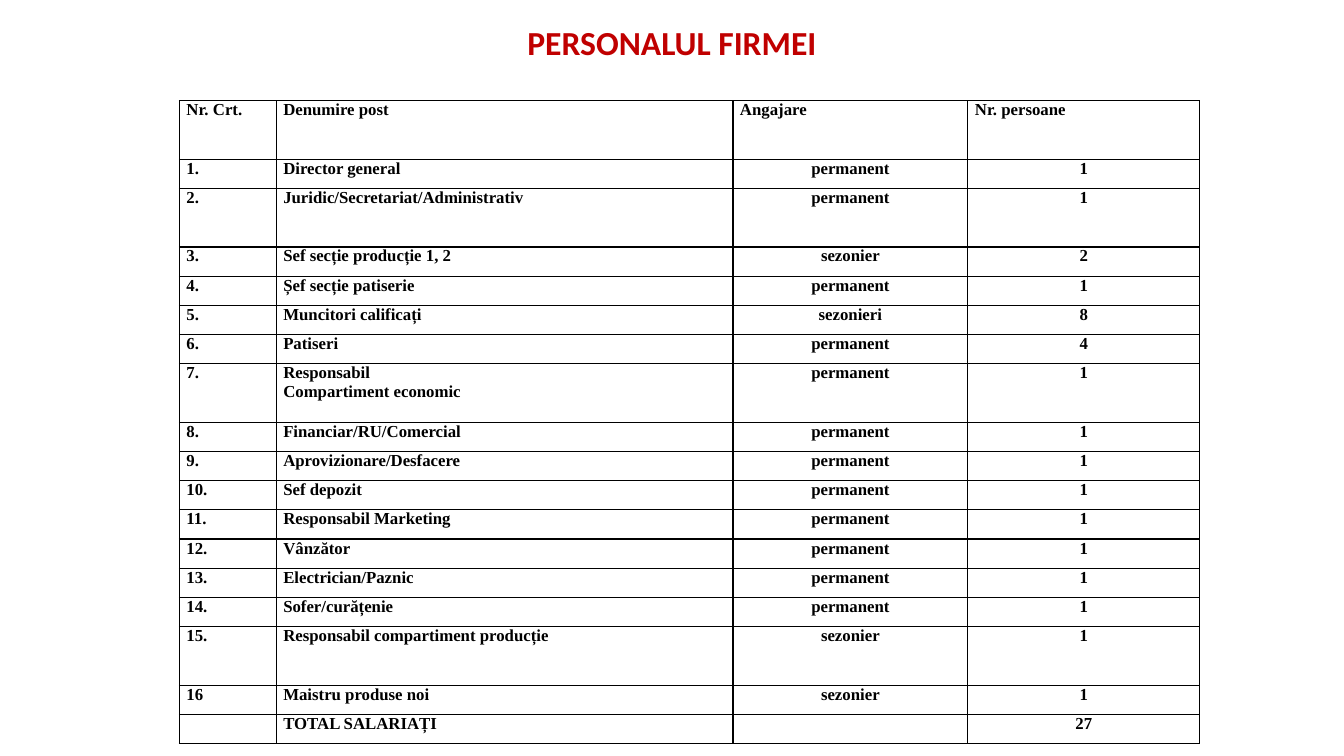
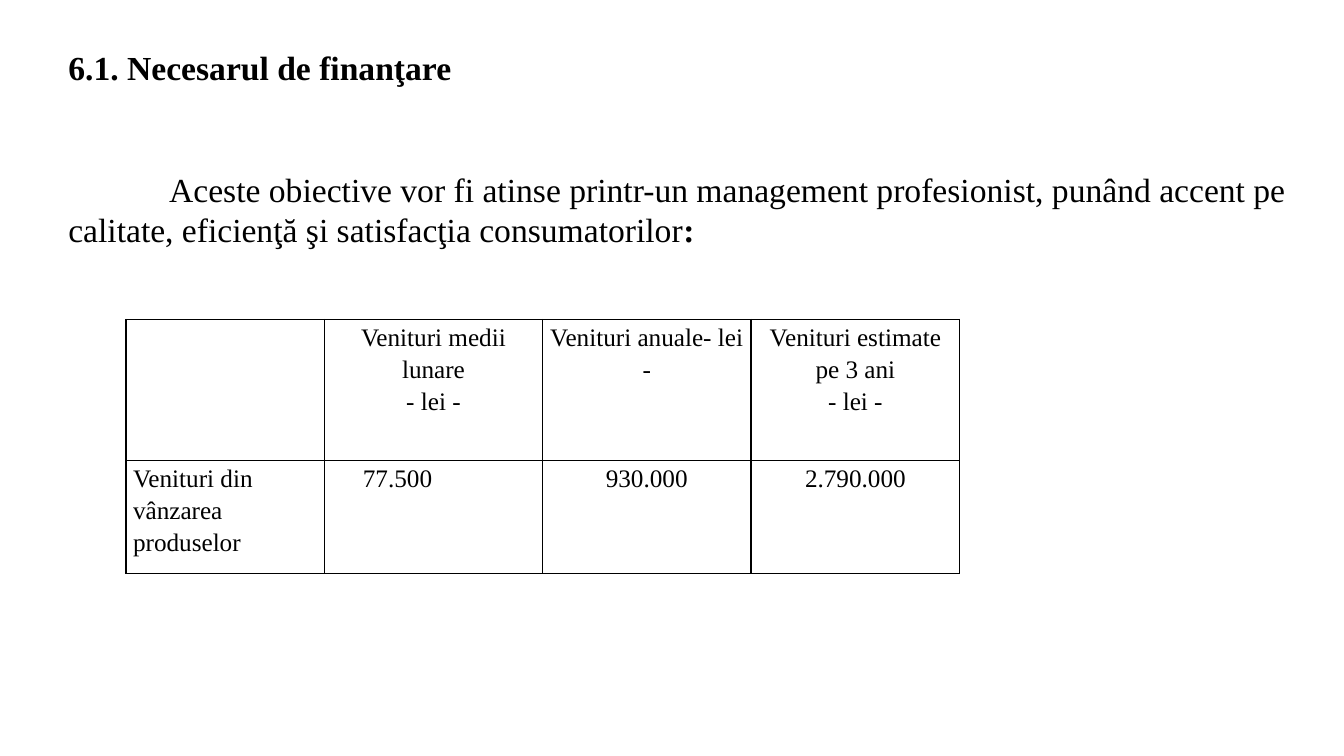
from lxml import etree
from pptx import Presentation
from pptx.dml.color import RGBColor
from pptx.enum.text import MSO_AUTO_SIZE, PP_ALIGN
from pptx.oxml.ns import qn
from pptx.util import Inches, Pt

LEFT, CENTER = PP_ALIGN.LEFT, PP_ALIGN.CENTER
FIT_SHAPE = MSO_AUTO_SIZE.SHAPE_TO_FIT_TEXT

BLACK, RED = "000000", "C00000"
SERIF, SANS = "Times New Roman", "Calibri"
TITLE_SIZE = 24

STAFF_HEADER = ("Nr. Crt.", "Denumire post", "Angajare", "Nr. persoane")
STAFF = [
    ("1.", "Director general", "permanent", "1"),
    ("2.", "Juridic/Secretariat/Administrativ", "permanent", "1"),
    ("3.", "Sef secție producție 1, 2", "sezonier", "2"),
    ("4.", "Șef secție patiserie", "permanent", "1"),
    ("5.", "Muncitori calificați", "sezonieri", "8"),
    ("6.", "Patiseri", "permanent", "4"),
    ("7.", "Responsabil\nCompartiment economic", "permanent", "1"),
    ("8.", "Financiar/RU/Comercial", "permanent", "1"),
    ("9.", "Aprovizionare/Desfacere", "permanent", "1"),
    ("10.", "Sef depozit", "permanent", "1"),
    ("11.", "Responsabil Marketing", "permanent", "1"),
    ("12.", "Vânzător", "permanent", "1"),
    ("13.", "Electrician/Paznic", "permanent", "1"),
    ("14.", "Sofer/curățenie", "permanent", "1"),
    ("15.", "Responsabil compartiment producție", "sezonier", "1"),
    ("16", "Maistru produse noi", "sezonier", "1"),
    ("", "TOTAL SALARIAȚI", "", "27"),
]
STAFF_ROW = 0.29
TALL_STAFF_ROWS = (0, 2, 7, 15)

INCOME = [
    ("", "Venituri medii lunare\n- lei -", "Venituri anuale- lei -",
     "Venituri estimate pe 3 ani\n- lei -"),
    ("Venituri din vânzarea produselor", "77.500", "930.000", "2.790.000"),
]


def rgb(color):
    return RGBColor.from_string(color)


def add_run(paragraph, text, size=TITLE_SIZE, font=SERIF, color=BLACK, bold=False):
    run = paragraph.add_run()
    run.text = text
    run.font.size = Pt(size)
    run.font.name = font
    run.font.color.rgb = rgb(color)
    run.font.bold = bold


def add_text(frame, text, align=LEFT, line_spacing=None, space_before=None,
             left_margin=0, first_indent=0, **run_format):
    """Write each line of text as a paragraph and return the last one."""
    for line in text.split("\n"):
        paragraph = frame.paragraphs[0]
        if paragraph.runs:
            paragraph = frame.add_paragraph()
        paragraph.alignment = align
        if line_spacing:
            paragraph.line_spacing = line_spacing
        if space_before:
            paragraph.space_before = Pt(space_before)
        properties = paragraph._p.get_or_add_pPr()
        properties.set("marL", str(Inches(left_margin)))
        properties.set("indent", str(Inches(first_indent)))
        if line:
            add_run(paragraph, line, **run_format)
        else:
            # An empty cell keeps the row's text size
            size = run_format.get("size", TITLE_SIZE)
            etree.SubElement(paragraph._p, qn("a:endParaRPr"), sz=str(size * 100))
    return paragraph


def add_text_box(slide, left, top, width, height):
    shape = slide.shapes.add_textbox(
        Inches(left), Inches(top), Inches(width), Inches(height))
    shape.text_frame.word_wrap = True
    shape.text_frame.auto_size = FIT_SHAPE
    return shape.text_frame


def style_cell(cell):
    cell.margin_left = cell.margin_right = Inches(0.07)
    cell.margin_top = cell.margin_bottom = 0
    properties = cell._tc.get_or_add_tcPr()
    for side in ("a:lnL", "a:lnR", "a:lnT", "a:lnB"):
        line = etree.SubElement(properties, qn(side), w=str(Pt(1)))
        fill = etree.SubElement(line, qn("a:solidFill"))
        etree.SubElement(fill, qn("a:srgbClr"), val=BLACK)
    cell.fill.background()


def add_grid(slide, left, top, widths, heights, rows, cell_format):
    """Add a bordered table; cell_format(row, column) gives the text format."""
    table = slide.shapes.add_table(
        len(rows), len(widths), Inches(left), Inches(top),
        Inches(sum(widths)), Inches(sum(heights))).table
    table.first_row = table.horz_banding = False
    for column, width in zip(table.columns, widths):
        column.width = Inches(width)
    for row, height in zip(table.rows, heights):
        row.height = Inches(height)
    for row_index, texts in enumerate(rows):
        for column_index, text in enumerate(texts):
            cell = table.cell(row_index, column_index)
            style_cell(cell)
            add_text(cell.text_frame, text, **cell_format(row_index, column_index))


def staff_format(row, column):
    align = CENTER if row > 0 and column > 1 else LEFT
    return {"size": 12, "bold": True, "align": align}


def income_format(row, column):
    cell_format = {"size": 18, "line_spacing": 1.15, "align": CENTER}
    if column == 0:
        cell_format["align"] = LEFT
    elif (row, column) == (1, 1):
        cell_format.update(align=LEFT, left_margin=0.31)
    return cell_format


def build_staff_slide(slide):
    rows = [STAFF_HEADER, *STAFF]
    heights = [STAFF_ROW * (2 if index in TALL_STAFF_ROWS else 1)
               for index in range(len(rows))]
    add_grid(slide, 1.78, 1, (0.96, 4.53, 2.33, 2.3), heights, rows, staff_format)
    title = add_text_box(slide, 0, 0.17, 13.33, 0.5)
    add_text(title, "PERSONALUL FIRMEI", align=CENTER, font=SANS, color=RED,
             size=TITLE_SIZE, bold=True)


def build_financing_slide(slide):
    body = add_text_box(slide, 0.58, 0.42, 12.33, 2.12)
    add_text(body, "6.1. Necesarul de finanţare", bold=True)
    goal = add_text(
        body, "Aceste obiective vor fi atinse printr-un management profesionist, "
        "punând accent pe calitate, eficienţă şi satisfacţia consumatorilor",
        space_before=58, first_indent=1)
    add_run(goal, ":", bold=True)
    add_grid(slide, 1.25, 3.17, (1.97, 2.16, 2.07, 2.07), (1.4, 1.12),
             INCOME, income_format)


def main():
    presentation = Presentation()
    presentation.slide_width = Inches(13.33)
    presentation.slide_height = Inches(7.5)
    blank_layout = presentation.slide_layouts[6]
    for build in (build_staff_slide, build_financing_slide):
        build(presentation.slides.add_slide(blank_layout))
    presentation.save("out.pptx")


if __name__ == "__main__":
    main()
